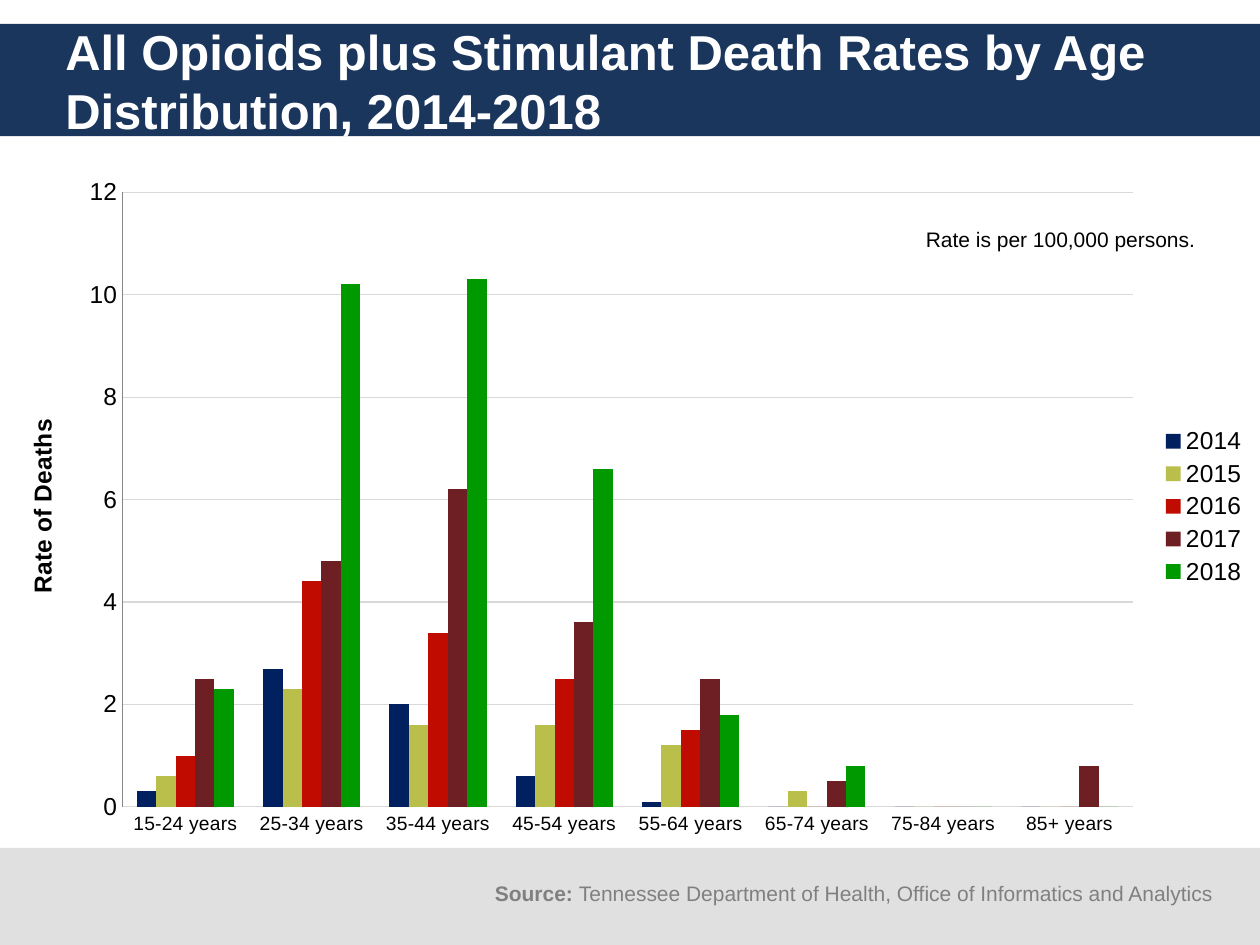
import pptx
import pptx.chart.data
import pptx.dml.color
import pptx.enum.chart
import pptx.enum.shapes
import pptx.enum.text
import pptx.util
from dataclasses import dataclass
from lxml import etree

Inches = pptx.util.Inches
Pt = pptx.util.Pt


@dataclass(frozen=True)
class Theme:
    face: str = "Arial"
    navy: str = "1B365D"
    pale: str = "E0E0E0"
    white: str = "FFFFFF"
    black: str = "000000"
    gray: str = "808080"
    grid: str = "D9D9D9"
    axis: str = "868686"
    bars: tuple = ("002060", "BABE4A", "BF0B00", "6D1F23", "009900")
    title: int = 28
    label: int = 14
    note: int = 12
    tick: int = 11


THEME = Theme()
AGES = [f"{low}-{low + 9} years" for low in range(15, 85, 10)] + ["85+ years"]
RATES = {
    "2014": (0.3, 2.7, 2, 0.6, 0.1, 0, 0, 0),
    "2015": (0.6, 2.3, 1.6, 1.6, 1.2, 0.3, 0, 0),
    "2016": (1, 4.4, 3.4, 2.5, 1.5, 0, 0, 0),
    "2017": (2.5, 4.8, 6.2, 3.6, 2.5, 0.5, 0, 0.8),
    "2018": (2.3, 10.2, 10.3, 6.6, 1.8, 0.8, 0, 0),
}


def rgb(color):
    return pptx.dml.color.RGBColor.from_string(color)


def style(font, size, color, bold=False):
    font.name = THEME.face
    font.size = Pt(size)
    font.bold = bold
    font.color.rgb = rgb(color)


def rule(line, color):
    line.color.rgb = rgb(color)
    line.width = Pt(0.75)


def add_band(slide, top, height, color):
    kind = pptx.enum.shapes.MSO_SHAPE.RECTANGLE
    band = slide.shapes.add_shape(kind, 0, Inches(top), Inches(10), Inches(height))
    band.shadow.inherit = False
    band.fill.solid()
    band.fill.fore_color.rgb = rgb(color)
    band.line.fill.background()


def add_text(slide, box, parts, size, color, middle=False):
    """Add one paragraph made of (text, bold) parts."""
    frame = slide.shapes.add_textbox(*map(Inches, box)).text_frame
    frame.word_wrap = True
    if middle:
        frame.vertical_anchor = pptx.enum.text.MSO_ANCHOR.MIDDLE
    for text, bold in parts:
        run = frame.paragraphs[0].add_run()
        run.text = text
        style(run.font, size, color, bold)


def set_plot(chart, **sides):
    """Fix the inner plot area, in fractions of the chart."""
    plot = chart.plots[0]._element.getparent()
    space = "{" + plot.nsmap["c"] + "}"
    for old in plot.findall(space + "layout"):
        plot.remove(old)
    layout = etree.Element(space + "layout")
    manual = etree.SubElement(layout, space + "manualLayout")
    values = {"layoutTarget": "inner", "xMode": "edge", "yMode": "edge", **sides}
    for name, value in values.items():
        etree.SubElement(manual, space + name).set("val", str(value))
    plot.insert(0, layout)


def style_axes(chart):
    none = pptx.enum.chart.XL_TICK_MARK.NONE
    ages, rates = chart.category_axis, chart.value_axis
    for axis, size, color in ((ages, THEME.tick, THEME.grid),
                              (rates, THEME.label, THEME.axis)):
        axis.major_tick_mark = axis.minor_tick_mark = none
        style(axis.tick_labels.font, size, THEME.black)
        rule(axis.format.line, color)
    rates.minimum_scale, rates.maximum_scale = 0, 12
    rates.major_unit = 2
    rates.tick_labels.number_format = "0"
    rates.tick_labels.number_format_is_linked = False
    rule(rates.major_gridlines.format.line, THEME.grid)
    frame = rates.axis_title.text_frame
    frame.text = "Rate of Deaths"
    style(frame.paragraphs[0].runs[0].font, THEME.label, THEME.black, True)


def add_rates(slide):
    data = pptx.chart.data.CategoryChartData()
    data.categories = AGES
    for year, values in RATES.items():
        data.add_series(year, values)
    kind = pptx.enum.chart.XL_CHART_TYPE.COLUMN_CLUSTERED
    box = map(Inches, (0, 1.31, 10, 5.42))
    chart = slide.shapes.add_chart(kind, *box, data).chart
    chart.has_title = False
    style(chart.font, 10, THEME.black)
    plot = chart.plots[0]
    plot.gap_width = 150
    plot.overlap = 0
    plot.vary_by_categories = False
    for series, color in zip(plot.series, THEME.bars):
        series.invert_if_negative = False
        series.format.fill.solid()
        series.format.fill.fore_color.rgb = rgb(color)
    style_axes(chart)
    chart.has_legend = True
    chart.legend.position = pptx.enum.chart.XL_LEGEND_POSITION.RIGHT
    chart.legend.include_in_layout = False
    style(chart.legend.font, THEME.label, THEME.black)
    set_plot(chart, x=0.097, y=0.04, w=0.802, h=0.9)


def main():
    deck = pptx.Presentation()
    deck.slide_width, deck.slide_height = Inches(10), Inches(7.5)
    slide = deck.slides.add_slide(deck.slide_layouts[6])
    add_band(slide, 0.19, 0.89, THEME.navy)
    add_band(slide, 6.73, 0.77, THEME.pale)
    add_rates(slide)
    title = "All Opioids plus Stimulant Death Rates by Age Distribution, 2014-2018"
    add_text(slide, (0.42, 0.19, 9.58, 0.9), [(title, True)],
             THEME.title, THEME.white, middle=True)
    add_text(slide, (7.25, 1.75, 3, 0.3),
             [("Rate is per 100,000 persons.", False)], THEME.note, THEME.black)
    office = "Tennessee Department of Health, Office of Informatics and Analytics"
    add_text(slide, (3.83, 6.94, 6, 0.3), [("Source: ", True), (office, False)],
             THEME.note, THEME.gray)
    deck.save("out.pptx")


if __name__ == "__main__":
    main()
